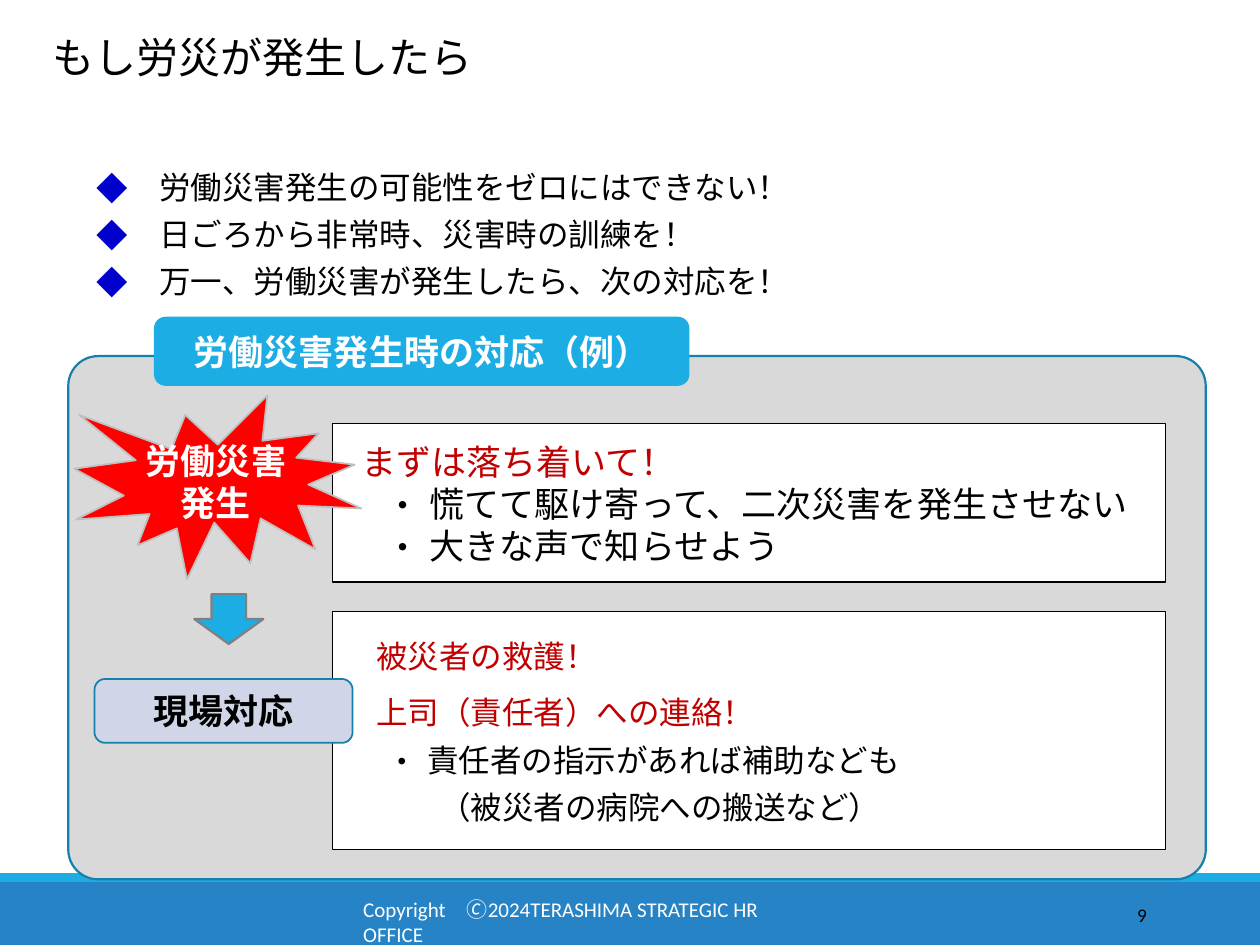
import pptx
import pptx.util
import pptx.dml.color
import pptx.enum.shapes
import pptx.enum.text
import pptx.oxml
import pptx.oxml.ns

Pt = pptx.util.Pt
Kind = pptx.enum.shapes.MSO_SHAPE
Align = pptx.enum.text.PP_ALIGN
Anchor = pptx.enum.text.MSO_ANCHOR
JAPAN = "Noto Sans CJK JP"
LATIN = "Calibri"
HUES = {
    "white": "FFFFFF", "black": "000000", "blue": "2683C6", "sky": "1CADE4",
    "edge": "1580A9", "gray": "D9D9D9", "navy": "0000CC", "crimson": "C00000",
    "pale": "D0D5E7", "red": "FF0000", "silver": "BFBFBF", "steel": "808080",
}


class Deck:
    def __init__(self, wide, high):
        self.show = pptx.Presentation()
        self.show.slide_width, self.show.slide_height = Pt(wide), Pt(high)
        self.slide = self.show.slides.add_slide(self.show.slide_layouts[6])

    def hue(self, name):
        return pptx.dml.color.RGBColor.from_string(HUES[name])

    def shape(self, kind, at, fill, line=None, width=1, round=None):
        item = self.slide.shapes.add_shape(kind, *map(Pt, at))
        item.shadow.inherit = False
        item.fill.solid()
        item.fill.fore_color.rgb = self.hue(fill)
        if line:
            item.line.color.rgb = self.hue(line)
            item.line.width = Pt(width)
        else:
            item.line.fill.background()
        if round is not None:
            item.adjustments[0] = round
        return item

    def box(self, at, anchor=Anchor.TOP):
        item = self.slide.shapes.add_textbox(*map(Pt, at))
        self.frame(item, anchor)
        return item

    def frame(self, item, anchor, inset=None):
        frame = item.text_frame
        frame.word_wrap = True
        frame.vertical_anchor = anchor
        if inset is not None:
            frame.margin_left = frame.margin_right = Pt(inset)
            frame.margin_top = frame.margin_bottom = Pt(inset)

    def para(self, item, text, size, color, font=JAPAN, bold=False,
             align=Align.LEFT, space=1, left=0, hang=0, mark=None, tint=None):
        frame = item.text_frame
        para = frame.paragraphs[0]
        if para.runs:
            para = frame.add_paragraph()
        para.alignment = align
        para.line_spacing = space
        props = para._p.get_or_add_pPr()
        props.set("marL", str(Pt(left)))
        props.set("indent", str(Pt(-hang)))
        if mark:
            space_name = pptx.oxml.ns.nsdecls("a")
            for xml in (
                f'<a:buClr {space_name}><a:srgbClr val="{HUES[tint or color]}"/></a:buClr>',
                f'<a:buFont {space_name} typeface="{JAPAN}"/>',
                f'<a:buChar {space_name} char="{mark}"/>',
            ):
                props.append(pptx.oxml.parse_xml(xml))
        run = para.add_run()
        run.text = text
        run.font.size = Pt(size)
        run.font.bold = bold
        run.font.name = font
        run.font.color.rgb = self.hue(color)
        east = run._r.get_or_add_rPr().makeelement(
            pptx.oxml.ns.qn("a:ea"), {"typeface": JAPAN})
        run._r.rPr.find(pptx.oxml.ns.qn("a:latin")).addnext(east)

    def label(self, item, text, color, inset=None):
        self.frame(item, Anchor.MIDDLE, inset)
        self.para(item, text, 20, color, LATIN, True, Align.CENTER)

    def panel(self, top, high):
        item = self.shape(Kind.RECTANGLE, (190, top, 476, high), "white", "black")
        self.frame(item, Anchor.TOP)
        return item


def main():
    deck = Deck(720, 540)
    deck.shape(Kind.RECTANGLE, (0, 504, 720, 36), "blue")
    deck.shape(Kind.RECTANGLE, (0, 499, 720, 5), "sky")
    foot = deck.box((200.5, 508.5, 276.5, 22))
    deck.para(foot, "Copyright\u3000🄫2024TERASHIMA STRATEGIC HR OFFICE", 12, "white", LATIN)
    page = deck.box((584.5, 508.5, 78, 29), Anchor.MIDDLE)
    deck.para(page, "9", 11, "black", LATIN, align=Align.RIGHT)
    title = deck.box((23, 14.5, 364, 36))
    deck.para(title, "もし労災が発生したら", 24, "black")

    deck.shape(Kind.ROUNDED_RECTANGLE, (39, 203.5, 650, 299), "gray", "edge", 1.25, 0.057)
    points = deck.box((48, 88.5, 442, 85), Anchor.MIDDLE)
    for text in ("労働災害発生の可能性をゼロにはできない！",
                 "日ごろから非常時、災害時の訓練を！",
                 "万一、労働災害が発生したら、次の対応を！"):
        deck.para(points, text, 18, "black", space=1.25, left=36, hang=36,
                  mark="◆", tint="navy")

    head = deck.shape(Kind.ROUNDED_RECTANGLE, (88, 181, 306, 39.5), "sky")
    deck.label(head, "労働災害発生時の対応（例）", "white")

    calm = deck.panel(242, 90.5)
    deck.para(calm, "まずは落ち着いて！", 20, "crimson", space=1.25, left=9.5)
    for text in ("慌てて駆け寄って、二次災害を発生させない", "大きな声で知らせよう"):
        deck.para(calm, text, 20, "black", left=48.5, hang=25, mark="・")

    aid = deck.panel(349.5, 136)
    for text in ("被災者の救護！", "上司（責任者）への連絡！"):
        deck.para(aid, text, 18, "crimson", space=1.5, left=18)
    deck.para(aid, "責任者の指示があれば補助なども", 18, "black", space=1.25,
              left=47, hang=23, mark="・")
    deck.para(aid, "（被災者の病院への搬送など）", 18, "black", space=1.25, left=54)

    scene = deck.shape(Kind.ROUNDED_RECTANGLE, (54, 388, 147.5, 36.5), "pale", "edge")
    deck.label(scene, "現場対応", "black")
    burst = deck.shape(Kind.EXPLOSION1, (42.5, 226, 164, 105), "red", "silver")
    deck.label(burst, "労働災害発生", "white", 0)
    deck.shape(Kind.DOWN_ARROW, (111, 339.5, 39.5, 28.5), "sky", "steel", 1.25)
    deck.show.save("out.pptx")


if __name__ == "__main__":
    main()
